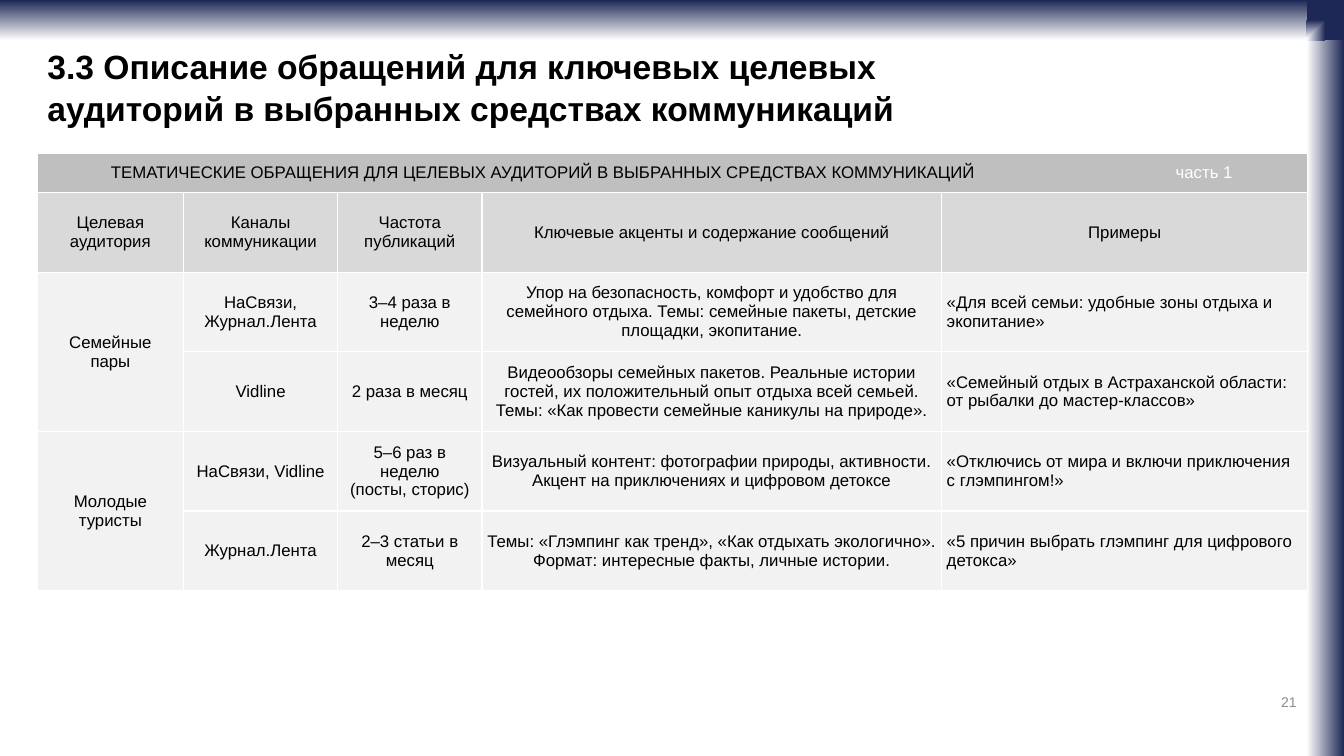
from dataclasses import dataclass
from lxml.etree import SubElement
from pptx import Presentation
from pptx.dml.color import RGBColor
from pptx.enum.shapes import MSO_SHAPE
from pptx.enum.text import MSO_ANCHOR, PP_ALIGN
from pptx.oxml import parse_xml
from pptx.oxml.ns import nsdecls, qn
from pptx.util import Inches, Pt

TITLE = "3.3 Описание обращений для ключевых целевых аудиторий в выбранных средствах коммуникаций"
NUMBER = "21"
BANNER = "ТЕМАТИЧЕСКИЕ ОБРАЩЕНИЯ ДЛЯ ЦЕЛЕВЫХ АУДИТОРИЙ В ВЫБРАННЫХ СРЕДСТВАХ КОММУНИКАЦИЙ"
PART = "часть 1"
HEADS = ["Целевая аудитория", "Каналы коммуникации", "Частота публикаций",
         "Ключевые акценты и содержание сообщений", "Примеры"]
GROUPS = [
    ("Семейные\nпары", [
        ("НаСвязи.., Журнал.Лента".replace("..", ""), "3–4 раза в неделю",
         "Упор на безопасность, комфорт и удобство для семейного отдыха. "
         "Темы: семейные пакеты, детские площадки, экопитание.",
         "«Для всей семьи: удобные зоны отдыха и экопитание»"),
        ("Vidline", "2 раза в месяц",
         "Видеообзоры семейных пакетов. Реальные истории гостей, их положительный "
         "опыт отдыха всей семьей. Темы: «Как провести семейные каникулы на природе».",
         "«Семейный отдых в Астраханской области: от рыбалки до мастер-классов»"),
    ]),
    ("Молодые туристы", [
        ("НаСвязи, Vidline", "5–6 раз в неделю\n(посты, сторис)",
         "Визуальный контент: фотографии природы, активности. "
         "Акцент на приключениях и цифровом детоксе",
         "«Отключись от мира и включи приключения с глэмпингом!»"),
        ("Журнал.Лента", "2–3 статьи в месяц",
         "Темы: «Глэмпинг как тренд», «Как отдыхать экологично». "
         "Формат: интересные факты, личные истории.",
         "«5 причин выбрать глэмпинг для цифрового детокса»"),
    ]),
]
GROUPS[0][1][0] = ("НаСвязи, Журнал.Лента",) + GROUPS[0][1][0][1:]
COLS = [1.45, 1.53, 1.43, 4.56, 3.63]
WIDE, HIGH, SIDE, TOP = 13.33, 7.5, 0.37, 0.4
HEAD, ROW, PAD = 0.39, 0.79, 0.05
INDENT, TAB = 0.73, 10.56


@dataclass
class Theme:
    font: str = "Arial"
    ink: str = "000000"
    white: str = "FFFFFF"
    navy: str = "1E2856"
    gray: str = "8C8C8C"
    banner: str = "BFBFBF"
    head: str = "D9D9D9"
    body: str = "F2F2F2"
    title: int = 24
    text: int = 12
    small: int = 10


theme = Theme()


def style(font, size, color, bold=False):
    font.name, font.size, font.bold = theme.font, Pt(size), bold
    font.color.rgb = RGBColor.from_string(color)


def band(slide, left, top, width, height, angle):
    shape = slide.shapes.add_shape(MSO_SHAPE.RECTANGLE, *map(Inches, (left, top, width, height)))
    shape.shadow.inherit = False
    shape.line.fill.background()
    shape.fill.gradient()
    shape.fill.gradient_angle = angle
    for stop, color in zip(shape.fill.gradient_stops, (theme.white, theme.navy)):
        stop.color.rgb = RGBColor.from_string(color)
    return shape


def corner(slide):
    shape = band(slide, WIDE - SIDE, 0, SIDE, TOP, 0)
    grad = shape.element.spPr.find(qn("a:gradFill"))
    grad.replace(grad.find(qn("a:lin")), parse_xml(
        f'<a:path {nsdecls("a")} path="rect"><a:fillToRect t="100000" r="100000"/></a:path>'))


def border(cell):
    props = cell._tc.get_or_add_tcPr()
    for spot, side in enumerate(("lnL", "lnR", "lnT", "lnB")):
        props.insert(spot, parse_xml(
            f'<a:{side} {nsdecls("a")} w="12700"><a:solidFill>'
            f'<a:srgbClr val="{theme.white}"/></a:solidFill></a:{side}>'))


def put(cell, text, align=PP_ALIGN.CENTER):
    cell.text = text
    for para in cell.text_frame.paragraphs:
        para.alignment = align
        style(para.font, theme.text, theme.ink)


def head(cell):
    cell.margin_left = Inches(INDENT)
    para = cell.text_frame.paragraphs[0]
    para.alignment = PP_ALIGN.LEFT
    tabs = SubElement(para._p.get_or_add_pPr(), qn("a:tabLst"))
    SubElement(tabs, qn("a:tab"), pos=str(Inches(TAB)), algn="l")
    for text, color in ((BANNER + "\t", theme.ink), (PART, theme.white)):
        run = para.add_run()
        run.text = text
        style(run.font, theme.text, color)


def grid(slide):
    count = 2 + sum(len(rows) for _, rows in GROUPS)
    sizes = [HEAD] + [ROW] * (count - 1)
    table = slide.shapes.add_table(count, len(COLS), Inches(SIDE), Inches(1.52),
                                   Inches(sum(COLS)), Inches(sum(sizes))).table
    table.first_row = table.horz_banding = False
    for col, width in zip(table.columns, COLS):
        col.width = Inches(width)
    fills = [theme.banner, theme.head] + [theme.body] * (count - 2)
    for row, size, color in zip(table.rows, sizes, fills):
        row.height = Inches(size)
        for cell in row.cells:
            cell.fill.solid()
            cell.fill.fore_color.rgb = RGBColor.from_string(color)
            cell.vertical_anchor = MSO_ANCHOR.MIDDLE
            cell.margin_left = cell.margin_right = Inches(PAD)
            cell.margin_top = cell.margin_bottom = Inches(PAD)
            border(cell)
    table.cell(0, 0).merge(table.cell(0, len(COLS) - 1))
    head(table.cell(0, 0))
    for col, text in enumerate(HEADS):
        put(table.cell(1, col), text)
    line = 2
    for name, rows in GROUPS:
        table.cell(line, 0).merge(table.cell(line + len(rows) - 1, 0))
        put(table.cell(line, 0), name)
        for row in rows:
            for col, text in enumerate(row, 1):
                last = col == len(COLS) - 1
                put(table.cell(line, col), text, PP_ALIGN.LEFT if last else PP_ALIGN.CENTER)
            line += 1


def label(shape, text, align, size, color, bold=False):
    frame = shape.text_frame
    frame.word_wrap = True
    frame.vertical_anchor = MSO_ANCHOR.MIDDLE
    frame.text = text
    para = frame.paragraphs[0]
    para.alignment = align
    style(para.font, size, color, bold)
    return para


def main():
    deck = Presentation()
    deck.slide_width, deck.slide_height = Inches(WIDE), Inches(HIGH)
    slide = deck.slides.add_slide(deck.slide_layouts[5])
    band(slide, WIDE - SIDE, 0, SIDE, HIGH, 0)
    band(slide, 0, 0, WIDE, TOP, 90)
    corner(slide)
    title = slide.shapes.title
    title.left, title.top, title.width, title.height = map(Inches, (SIDE, TOP, 9.55, 0.91))
    para = label(title, TITLE, PP_ALIGN.LEFT, theme.title, theme.ink, True)
    para.line_spacing = 1.05
    number = slide.shapes.add_textbox(*map(Inches, (12.1, 6.83, 0.86, 0.27)))
    label(number, NUMBER, PP_ALIGN.RIGHT, theme.small, theme.gray)
    grid(slide)
    deck.save("out.pptx")


if __name__ == "__main__":
    main()
